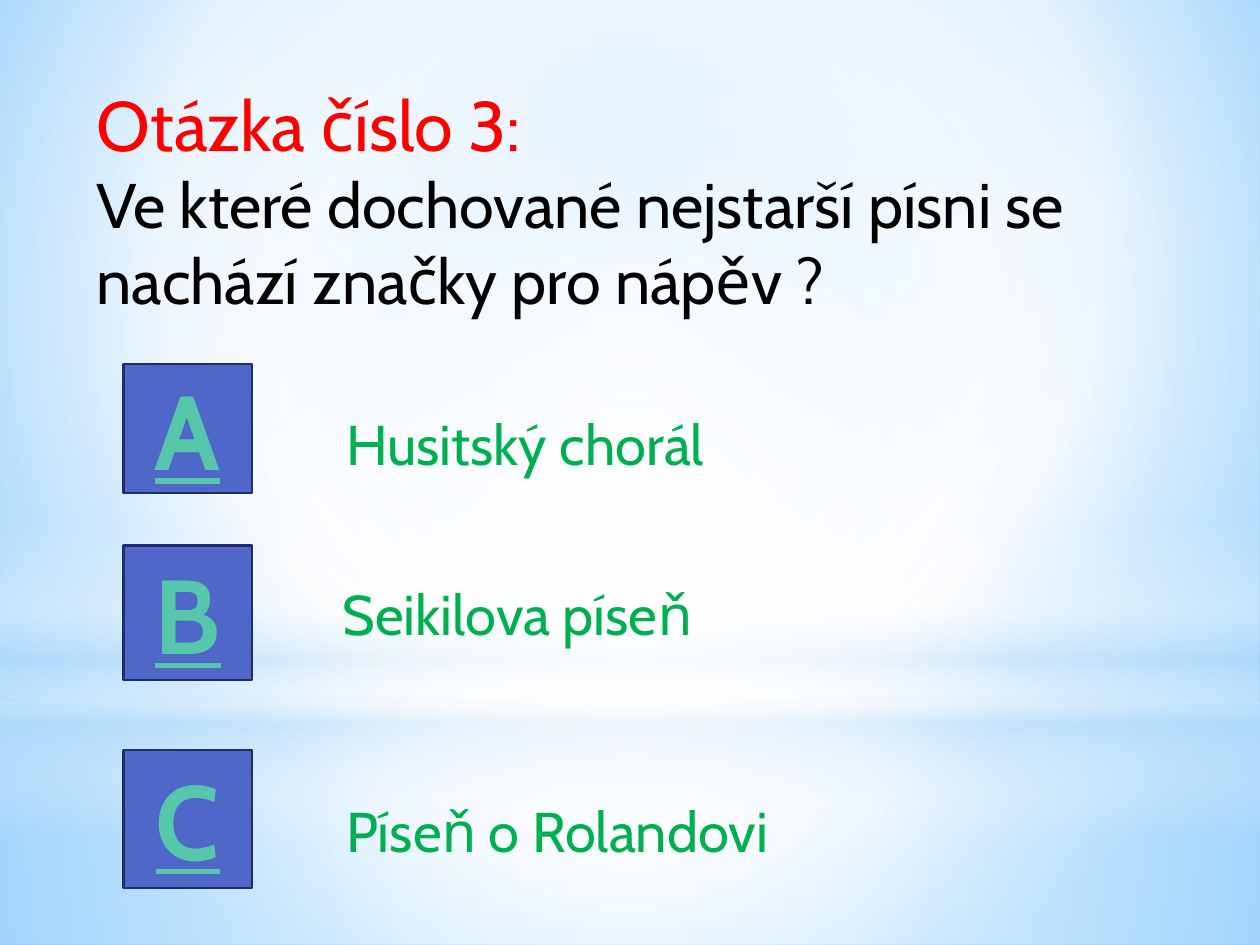
from lxml import etree
from pptx import Presentation
from pptx.dml.color import RGBColor
from pptx.enum.shapes import MSO_SHAPE
from pptx.enum.text import MSO_ANCHOR, PP_ALIGN
from pptx.oxml.ns import qn
from pptx.util import Inches, Pt

FONT = "Cabin"
CENTER = (50, 50, 50, 50)


def color(hex_value):
    return RGBColor.from_string(hex_value)


def style(font, size, hex_value):
    font.name = FONT
    font.size = Pt(size)
    font.color.rgb = color(hex_value)


def gradient(stops, focus=None, angle=0):
    """Make a gradFill of (position, colour, opacity) stops, circular when a focus is given."""
    grad = etree.Element(qn("a:gradFill"), rotWithShape="1")
    stop_list = etree.SubElement(grad, qn("a:gsLst"))
    for position, hex_value, opacity in stops:
        stop = etree.SubElement(stop_list, qn("a:gs"), pos=str(position * 1000))
        tint = etree.SubElement(stop, qn("a:srgbClr"), val=hex_value)
        if opacity < 100:
            etree.SubElement(tint, qn("a:alpha"), val=str(opacity * 1000))
    if focus:
        circle = etree.SubElement(grad, qn("a:path"), path="circle")
        sides = {side: str(share * 1000) for side, share in zip("ltrb", focus)}
        etree.SubElement(circle, qn("a:fillToRect"), **sides)
    else:
        etree.SubElement(grad, qn("a:lin"), ang=str(angle * 60000), scaled="0")
    return grad


def replace_solid_fill(parent, grad):
    parent.replace(parent.find(qn("a:solidFill")), grad)


def add_glow(slide, kind, box, grad):
    glow = slide.shapes.add_shape(kind, *map(Inches, box))
    glow.shadow.inherit = False
    glow.line.fill.background()
    glow.fill.solid()
    replace_solid_fill(glow._element.spPr, grad)


def add_backdrop(slide, width, height):
    slide.background.fill.solid()
    base = [(0, "9ED5FF", 100), (60, "FFFFFF", 100), (100, "5BB9FF", 100)]
    background = slide._element.cSld.find(".//" + qn("p:bgPr"))
    replace_solid_fill(background, gradient(base, (20, 10, 20, 60)))

    horizon = 5.58
    floor = [(0, "FFFFFF", 91), (37, "FFFFFF", 76), (100, "B4DCFA", 79)]
    sky = [(0, "FFFFFF", 89), (48, "FFFFFF", 62), (100, "B4DCFA", 79)]
    band = [(0, "FFFFFF", 0), (29, "FFFFFF", 30), (45, "B4DCFA", 40),
            (55, "FFFFFF", 26), (65, "B4DCFA", 60), (100, "FFFFFF", 0)]
    halo = [(0, "FFFFFF", 100), (56, "FFFFFF", 0)]
    rect, oval = MSO_SHAPE.RECTANGLE, MSO_SHAPE.OVAL
    add_glow(slide, rect, (0, horizon, width, height - horizon), gradient(floor, CENTER))
    add_glow(slide, rect, (0, 0, width, horizon), gradient(sky, CENTER))
    add_glow(slide, rect, (0, 4.12, width, 2.5), gradient(band, angle=90))
    add_glow(slide, oval, (0, 1.75, width, horizon), gradient(halo, CENTER))


def add_text_frame(slide, box):
    frame = slide.shapes.add_textbox(*map(Inches, box)).text_frame
    frame.word_wrap = True
    return frame


def add_question(slide, box, heading, question):
    paragraph = add_text_frame(slide, box).paragraphs[0]
    heading_run = paragraph.add_run()
    heading_run.text = heading
    style(heading_run.font, 40, "FF0000")
    paragraph.add_line_break()
    question_run = paragraph.add_run()
    question_run.text = question
    style(question_run.font, 36, "000000")


def add_answer(slide, box, letter, answer, indent, drop):
    """Place a letter tile at the left of the box and its answer, offset by indent and drop."""
    left, top, width, height = box
    tile_width = 1.02
    tile = slide.shapes.add_shape(
        MSO_SHAPE.RECTANGLE, *map(Inches, (left, top, tile_width, height)))
    tile.shadow.inherit = False
    tile.fill.solid()
    tile.fill.fore_color.rgb = color("4E67C8")
    tile.line.color.rgb = color("1F2E69")
    tile.line.width = Pt(1.25)
    tile.text_frame.vertical_anchor = MSO_ANCHOR.MIDDLE
    label = tile.text_frame.paragraphs[0]
    label.text = letter
    label.alignment = PP_ALIGN.CENTER
    style(label.font, 60, "56C7AA")
    label.font.bold = True
    label.font.underline = True

    text_box = (left + indent, top + drop, width - indent, 0.64)
    wording = add_text_frame(slide, text_box).paragraphs[0]
    wording.text = answer
    style(wording.font, 32, "00B050")


def main():
    width, height = 10, 7.5
    presentation = Presentation()
    presentation.slide_width = Inches(width)
    presentation.slide_height = Inches(height)
    slide = presentation.slides.add_slide(presentation.slide_layouts[6])

    add_backdrop(slide, width, height)
    add_question(slide, (0.67, 0.6, 8.43, 2.29), "Otázka číslo 3:",
                 "Ve které dochované nejstarší písni se nachází značky pro nápěv ?")
    answers = [
        ((0.98, 2.89, 7.1, 1.02), "A", "Husitský chorál", 1.67, 0.31),
        ((0.98, 4.33, 6.05, 1.07), "B", "Seikilova píseň", 1.64, 0.22),
        ((0.98, 5.95, 5.44, 1.1), "C", "Píseň o Rolandovi", 1.67, 0.32),
    ]
    for answer in answers:
        add_answer(slide, *answer)

    presentation.save("out.pptx")


if __name__ == "__main__":
    main()
